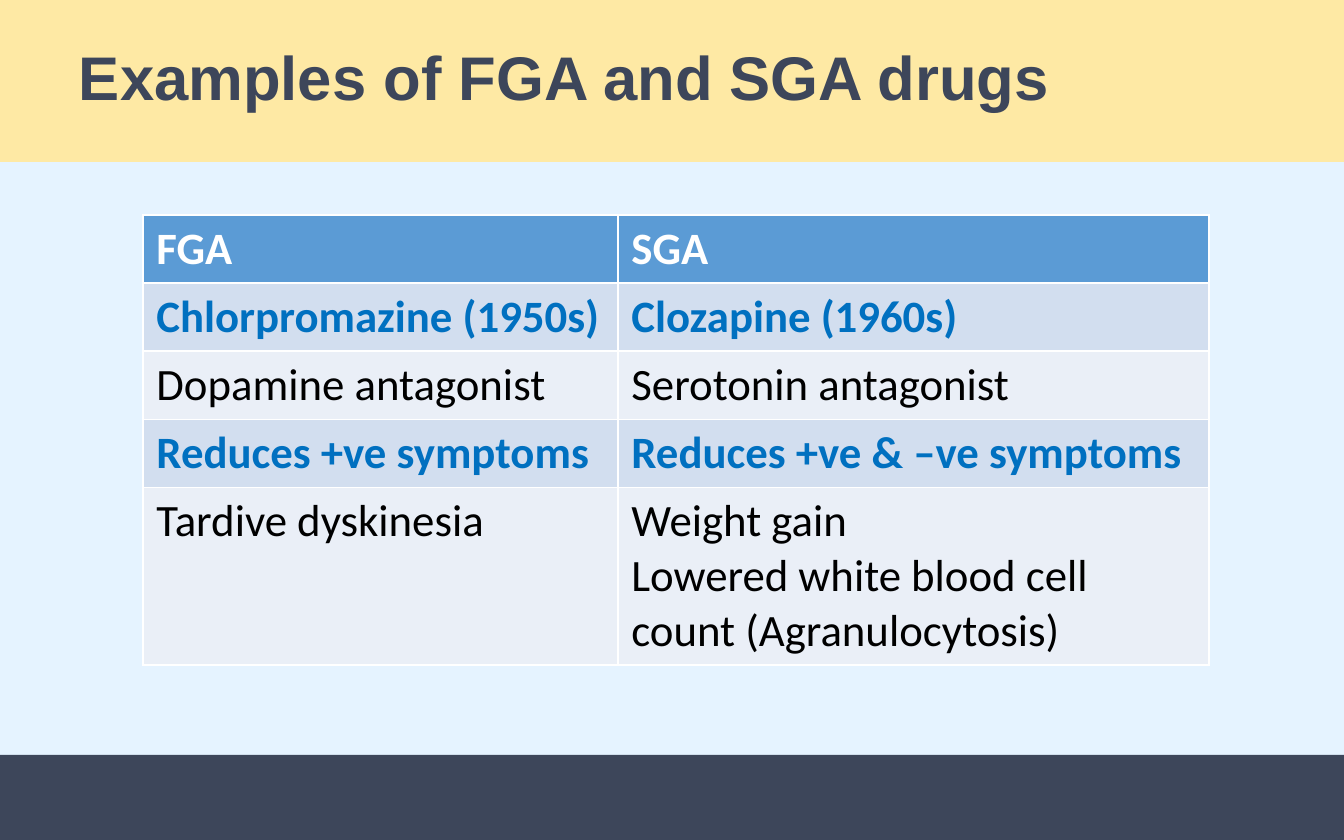
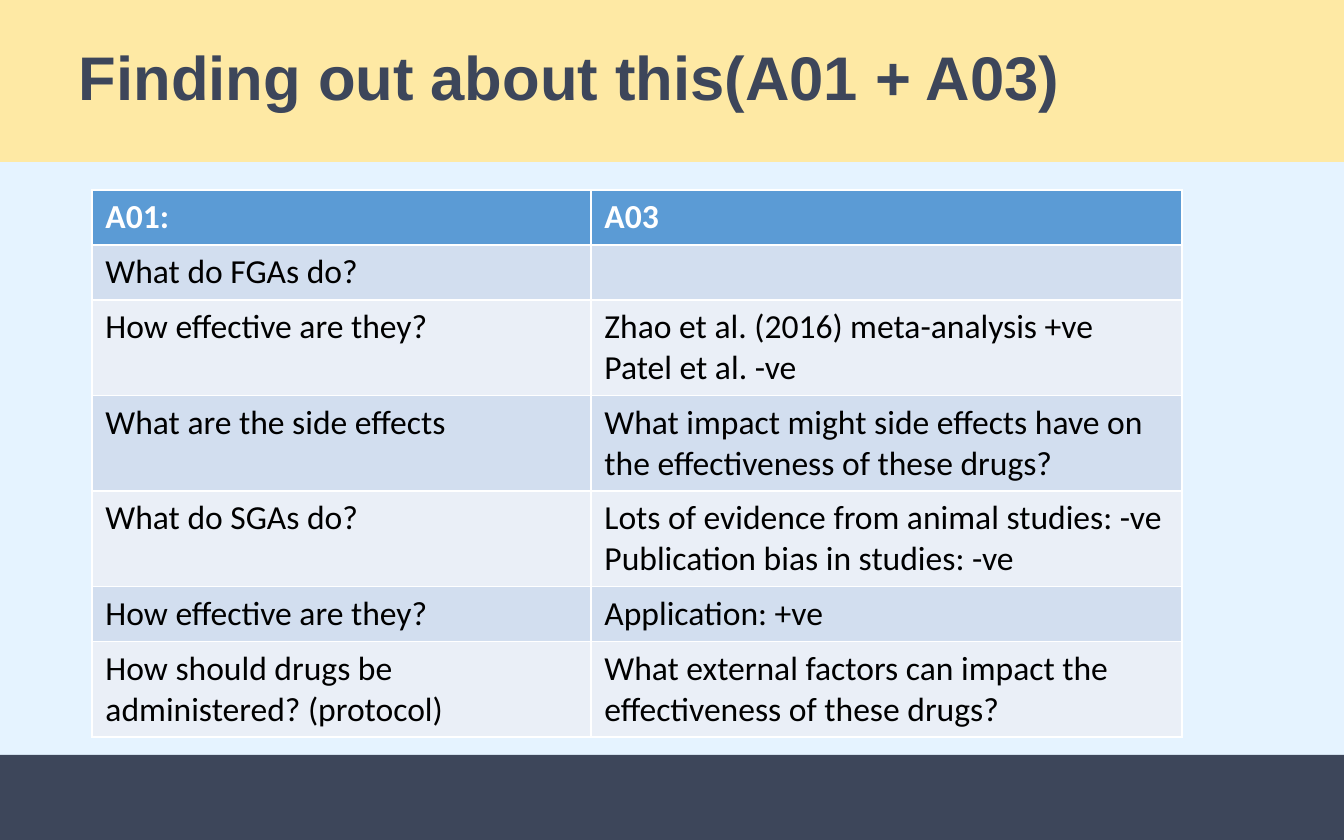
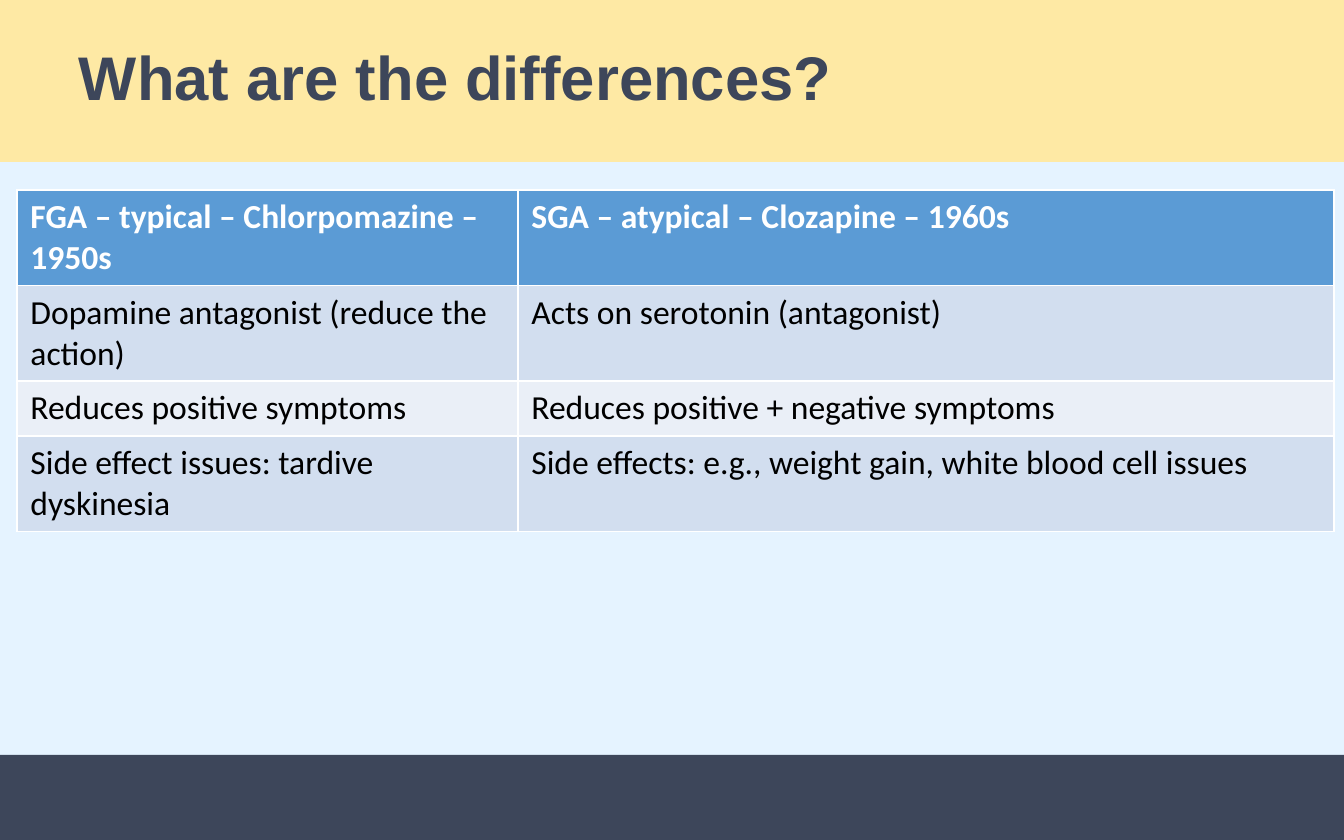
from dataclasses import dataclass

from pptx import Presentation
from pptx.dml.color import RGBColor
from pptx.enum.shapes import MSO_SHAPE
from pptx.enum.text import MSO_ANCHOR, MSO_AUTO_SIZE, PP_ALIGN
from pptx.util import Emu, Pt

# Shared look
NAVY = RGBColor(0x3D, 0x46, 0x5A)
YELLOW = RGBColor(0xFE, 0xE9, 0xA4)
PALE_BLUE = RGBColor(0xE5, 0xF3, 0xFF)
HEADER_BLUE = RGBColor(0x5B, 0x9B, 0xD5)
BAND_DARK = RGBColor(0xD2, 0xDE, 0xEF)
BAND_LIGHT = RGBColor(0xEA, 0xEF, 0xF7)
ACCENT_BLUE = RGBColor(0x00, 0x70, 0xC0)
WHITE = RGBColor(0xFF, 0xFF, 0xFF)
BLACK = RGBColor(0x00, 0x00, 0x00)
TITLE_FONT, TABLE_FONT = "Arial", "Calibri"
TITLE_SIZE = 33

SLIDE_WIDTH, SLIDE_HEIGHT = 1344, 840
TITLE_BOX = (0, 0, SLIDE_WIDTH, 162)
FOOTER_BOX = (0, 755, SLIDE_WIDTH, 85)
TITLE_INDENT = 79
ROW_HEIGHT = 55


def px(length):
    return Emu(round(length * 914400 / 134.4))


@dataclass
class ComparisonSlide:
    title: str
    origin: tuple
    columns: tuple
    size: int
    rows: list
    highlighted: tuple = ()


SLIDES = [
    ComparisonSlide(
        "Examples of FGA and SGA drugs", (143, 215), (475, 591), 24,
        [("FGA", "SGA"),
         ("Chlorpromazine (1950s)", "Clozapine (1960s)"),
         ("Dopamine antagonist", "Serotonin antagonist"),
         ("Reduces +ve symptoms", "Reduces +ve & –ve symptoms"),
         ("Tardive dyskinesia",
          "Weight gain\nLowered white blood cell count (Agranulocytosis)")],
        highlighted=(1, 3)),
    ComparisonSlide(
        "Finding out about this(A01 + A03)", (92, 190), (499, 591), 18,
        [("A01:", "A03"),
         ("What do FGAs do?", ""),
         ("How effective are they?",
          "Zhao et al. (2016) meta-analysis +ve\nPatel et al. -ve"),
         ("What are the side effects",
          "What impact might side effects have on the effectiveness of these drugs?"),
         ("What do SGAs do?",
          "Lots of evidence from animal studies: -ve\nPublication bias in studies: -ve"),
         ("How effective are they?", "Application: +ve"),
         ("How should drugs be administered? (protocol)",
          "What external factors can impact the effectiveness of these drugs?")]),
    ComparisonSlide(
        "What are the differences?", (17, 190), (501, 816), 18,
        [("FGA – typical – Chlorpomazine – 1950s",
          "SGA – atypical – Clozapine – 1960s"),
         ("Dopamine antagonist (reduce the action)",
          "Acts on serotonin (antagonist)"),
         ("Reduces positive symptoms", "Reduces positive + negative symptoms"),
         ("Side effect issues: tardive dyskinesia",
          "Side effects: e.g., weight gain, white blood cell issues")]),
]


def fill_solid(target, color):
    target.fill.solid()
    target.fill.fore_color.rgb = color


def add_run(paragraph, text, font_name, size, color, bold):
    run = paragraph.add_run()
    run.text = text
    run.font.name = font_name
    run.font.size = Pt(size)
    run.font.color.rgb = color
    run.font.bold = bold


def add_footer_band(slide, box):
    band = slide.shapes.add_shape(MSO_SHAPE.RECTANGLE, *map(px, box))
    band.shadow.inherit = False
    fill_solid(band, NAVY)
    band.line.fill.background()


def format_title(slide, box, text):
    title = slide.shapes.title
    title.left, title.top, title.width, title.height = map(px, box)
    fill_solid(title, YELLOW)
    frame = title.text_frame
    frame.auto_size = MSO_AUTO_SIZE.NONE
    frame.word_wrap = True
    frame.vertical_anchor = MSO_ANCHOR.MIDDLE
    frame.margin_left = px(TITLE_INDENT)
    paragraph = frame.paragraphs[0]
    paragraph.alignment = PP_ALIGN.LEFT
    paragraph.line_spacing = 0.9
    add_run(paragraph, text, TITLE_FONT, TITLE_SIZE, NAVY, True)


def row_style(index, highlighted):
    """Return the fill, text colour and boldness of a table row."""
    if index == 0:
        return HEADER_BLUE, WHITE, True
    band = BAND_DARK if index % 2 else BAND_LIGHT
    return (band, ACCENT_BLUE, True) if index in highlighted else (band, BLACK, False)


def add_comparison_table(slide, content):
    # The default table style supplies the white rules
    box = (*content.origin, sum(content.columns), ROW_HEIGHT * len(content.rows))
    table = slide.shapes.add_table(
        len(content.rows), len(content.columns), *map(px, box)).table
    for column, width in zip(table.columns, content.columns):
        column.width = px(width)
    for index, texts in enumerate(content.rows):
        table.rows[index].height = px(ROW_HEIGHT)
        fill, color, bold = row_style(index, content.highlighted)
        for cell, text in zip(table.rows[index].cells, texts):
            fill_solid(cell, fill)
            frame = cell.text_frame
            for number, line in enumerate(text.splitlines()):
                paragraph = frame.add_paragraph() if number else frame.paragraphs[0]
                add_run(paragraph, line, TABLE_FONT, content.size, color, bold)


def add_comparison_slide(presentation, content):
    slide = presentation.slides.add_slide(presentation.slide_layouts[5])
    add_footer_band(slide, FOOTER_BOX)
    format_title(slide, TITLE_BOX, content.title)
    add_comparison_table(slide, content)


def main():
    presentation = Presentation()
    presentation.slide_width = px(SLIDE_WIDTH)
    presentation.slide_height = px(SLIDE_HEIGHT)
    fill_solid(presentation.slide_master.background, PALE_BLUE)
    for content in SLIDES:
        add_comparison_slide(presentation, content)
    presentation.save("out.pptx")


if __name__ == "__main__":
    main()
